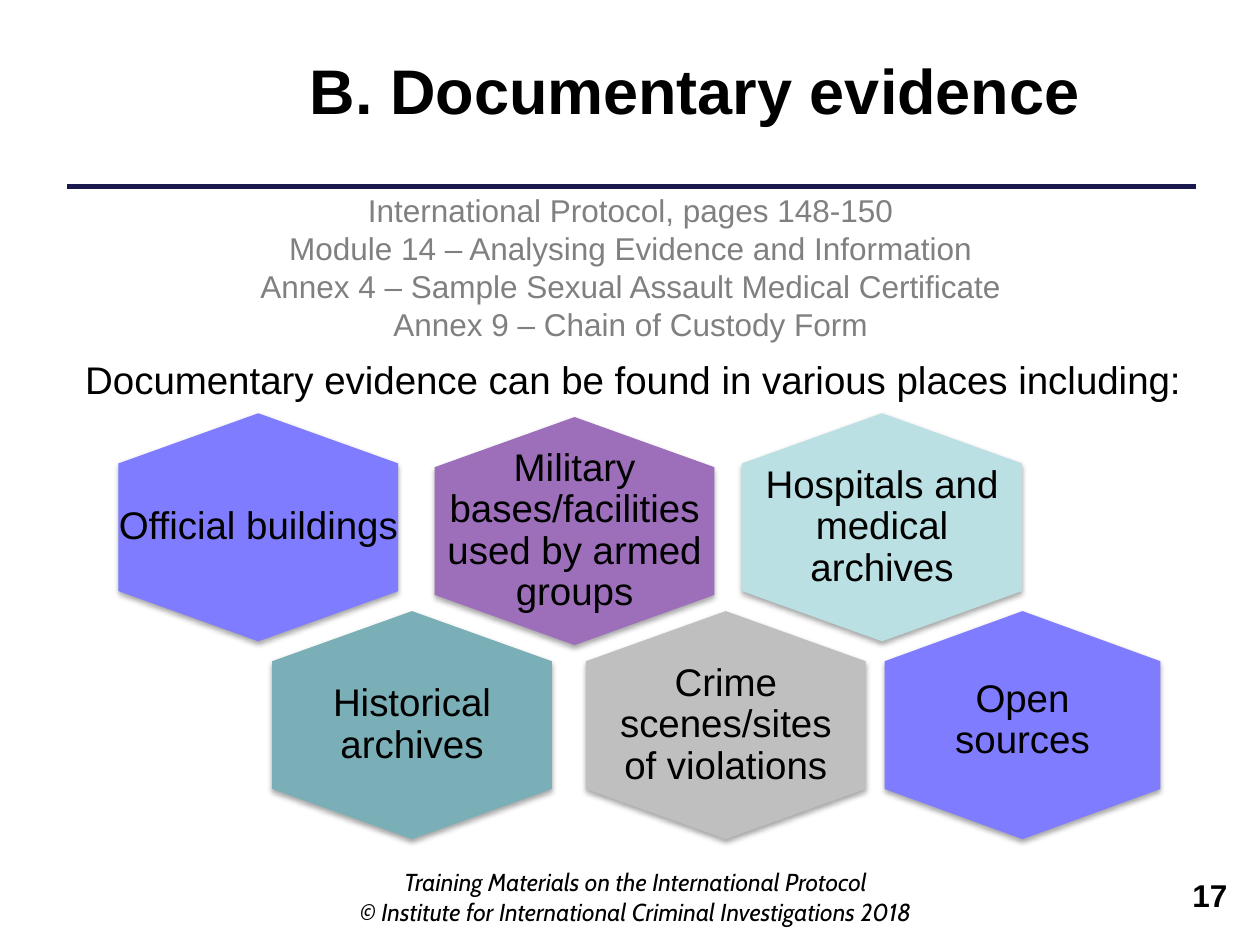
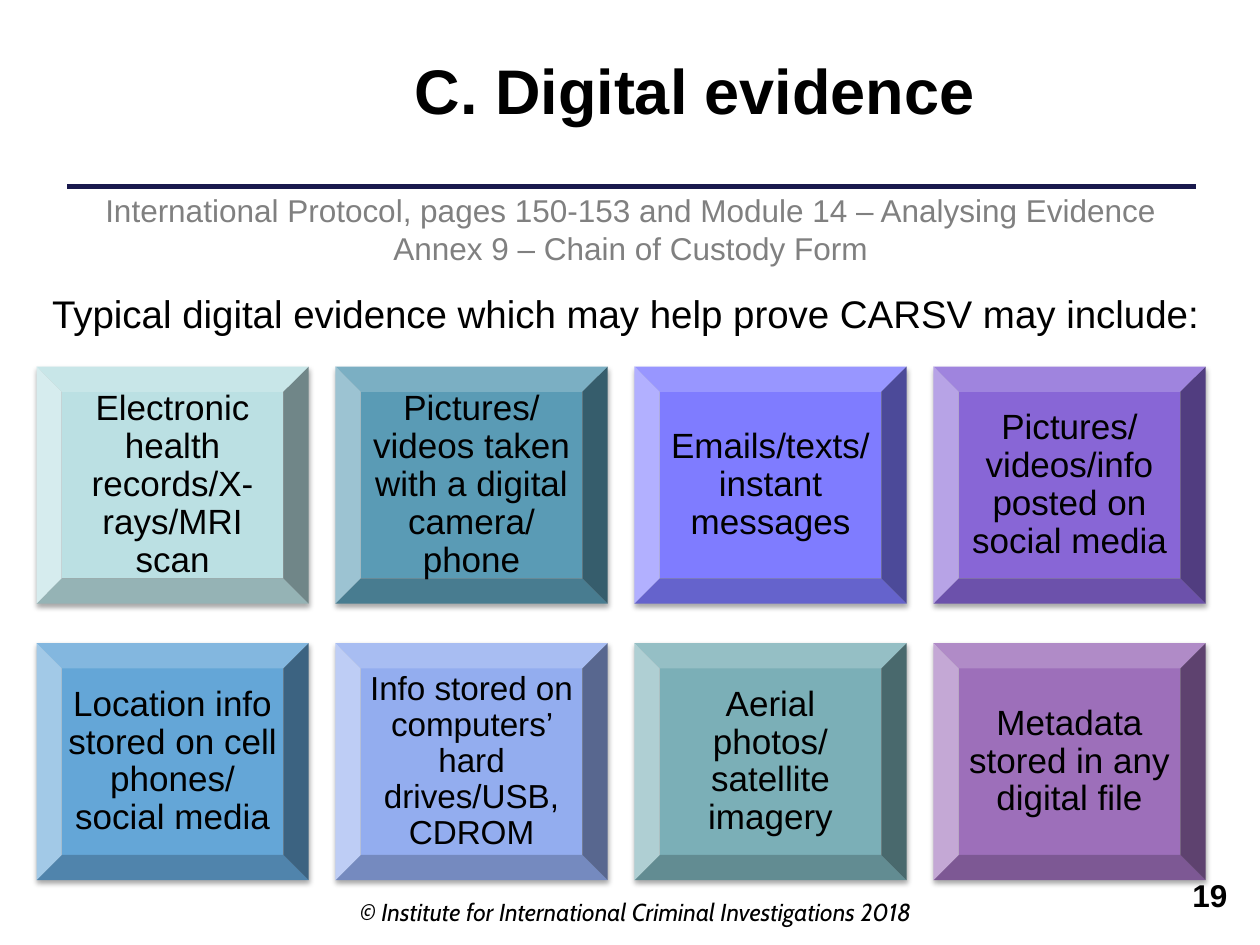
from dataclasses import dataclass
from lxml import etree
from pptx import Presentation
from pptx.dml.color import RGBColor
from pptx.enum.shapes import MSO_CONNECTOR as Link, MSO_SHAPE as Shape
from pptx.enum.text import MSO_ANCHOR as Anchor, MSO_AUTO_SIZE as Fit, PP_ALIGN as Align
from pptx.oxml.ns import qn
from pptx.util import Inches, Pt


@dataclass(frozen=True)
class Theme:
    ink: str = "000000"
    muted: str = "808080"
    rule: str = "19194D"
    blue: str = "7F7CFF"
    purple: str = "9D6FBA"
    ice: str = "BBE0E3"
    teal: str = "7BAFB7"
    grey: str = "BFBFBF"
    sea: str = "5A9BB5"
    violet: str = "8866D6"
    sky: str = "64A6D7"
    mist: str = "93ADEF"
    font: str = "Arial"
    foot: str = "Cabin"
    head: int = 36
    lead: int = 22
    tile: int = 20
    tight: int = 19
    note: int = 18
    small: int = 14


T = Theme()
COLS, ROWS = 100, 75
WIDTH, HEIGHT = Inches(10), Inches(7.5)
RIGHTS = "© Institute for International Criminal Investigations 2018"


def write(frame, text, size=T.note, color=T.ink, font=T.font, bold=False,
          italic=False, align=Align.CENTER, anchor=Anchor.TOP, gap=1.0, pad=None):
    """Fill a frame, one paragraph per line; pad is left, top, right, bottom in inches."""
    frame.word_wrap = True
    frame.auto_size = Fit.NONE
    frame.vertical_anchor = anchor
    if pad:
        (frame.margin_left, frame.margin_top,
         frame.margin_right, frame.margin_bottom) = map(Inches, pad)
    for i, line in enumerate(text.split("\n")):
        para = frame.add_paragraph() if i else frame.paragraphs[0]
        para.text = line
        para.alignment = align
        para.line_spacing = gap
        style = para.font
        style.name, style.size = font, Pt(size)
        style.bold, style.italic = bold, italic
        style.color.rgb = RGBColor.from_string(color)


class Deck:
    """Holds the presentation and current slide; lengths are grid columns and rows."""

    def __init__(self):
        self.show = Presentation()
        self.show.slide_width, self.show.slide_height = WIDTH, HEIGHT
        self.slide = None

    def scale(self, *cells):
        """Turn alternating columns and rows into lengths."""
        units = (WIDTH / COLS, HEIGHT / ROWS)
        return [round(n * units[i % 2]) for i, n in enumerate(cells)]

    def start(self, title, refs, foot, page):
        self.slide = self.show.slides.add_slide(self.show.slide_layouts[5])
        head = self.slide.shapes.title
        head.left, head.top, head.width, head.height = self.scale(13.8, 3.6, 82.7, 7.1)
        write(head.text_frame, title, size=T.head, bold=True)
        self.rule(94.9, 5.3, 14.8)
        self.text((2.8, 14.7, 94.5, 16.2), refs, color=T.muted)
        self.text((27.2, 68.3, 46.5, 5.2), foot, size=T.small, font=T.foot,
                  italic=True, anchor=Anchor.BOTTOM, pad=(0.1, 0, 0.1, 0))
        self.text((72.8, 69, 25.6, 5.2), page, bold=True, align=Align.RIGHT)

    def text(self, box, text, **fmt):
        shape = self.slide.shapes.add_textbox(*self.scale(*box))
        write(shape.text_frame, text, **fmt)

    def rule(self, left, right, y):
        line = self.slide.shapes.add_connector(
            Link.STRAIGHT, *self.scale(left, y, right, y))
        line.line.width = Pt(2.5)
        line.line.color.rgb = RGBColor.from_string(T.rule)
        etree.SubElement(line._element.spPr, qn("a:effectLst"))

    def paint(self, shape, fill):
        """Give a solid fill, no outline and a soft shadow below."""
        shape.fill.solid()
        shape.fill.fore_color.rgb = RGBColor.from_string(fill)
        shape.line.fill.background()
        shape.shadow.inherit = False
        effects = shape._element.spPr.find(qn("a:effectLst"))
        shade = etree.SubElement(effects, qn("a:outerShdw"), blurRad=str(Pt(3.1)),
                                 dist=str(Pt(1.8)), dir="5400000", rotWithShape="0")
        color = etree.SubElement(shade, qn("a:srgbClr"), val=T.ink)
        etree.SubElement(color, qn("a:alpha"), val="35000")

    def hexagon(self, x, y, text, fill, wide=22.2, tall=18.1, pad=(0, 0.26, 0, 0.26)):
        mid, low, high = x + wide / 2, y + 0.78 * tall, y + 0.22 * tall
        ends = [(x + wide, high), (x + wide, low), (mid, y + tall), (x, low), (x, high)]
        pen = self.slide.shapes.build_freeform(*self.scale(mid, y))
        pen.add_line_segments([self.scale(*end) for end in ends], close=True)
        shape = pen.convert_to_shape()
        self.paint(shape, fill)
        write(shape.text_frame, text, size=T.lead, anchor=Anchor.MIDDLE, gap=0.9, pad=pad)

    def bevel(self, x, y, text, fill, size=T.tile):
        wide, tall, edge = 21.6, 18.8, 2
        shape = self.slide.shapes.add_shape(Shape.BEVEL, *self.scale(x, y, wide, tall))
        shape.adjustments[0] = edge / tall
        self.paint(shape, fill)
        write(shape.text_frame, text, size=size, anchor=Anchor.MIDDLE, gap=0.9,
              pad=(0.04, 0, 0.04, 0))


def papers(deck):
    deck.start("B. Documentary evidence",
               "International Protocol, pages 148-150\n"
               "Module 14 – Analysing Evidence and Information\n"
               "Annex 4 – Sample Sexual Assault Medical Certificate\n"
               "Annex 9 – Chain of Custody Form",
               "Training Materials on the International Protocol\n" + RIGHTS, "17")
    deck.text((2, 27.7, 96.5, 4.7), "Documentary evidence can be found in "
              "various places including:", size=T.lead, anchor=Anchor.MIDDLE)
    top, low = 32.8, 48.5
    deck.hexagon(70.2, low, "Open sources", T.blue, wide=21.9,
                 pad=(0.23, 0.26, 0.23, 0.33))
    deck.hexagon(58.9, top, "Hospitals and medical archives", T.ice)
    deck.hexagon(34.5, top + 0.3, "Military bases/facilities used by armed groups", T.purple)
    deck.hexagon(9.4, top, "Official buildings", T.blue)
    deck.hexagon(21.6, low, "Historical archives", T.teal)
    deck.hexagon(46.5, low, "Crime scenes/sites of violations", T.grey,
                 pad=(0.23, 0.26, 0.23, 0.26))


def digital(deck):
    deck.start("C. Digital evidence",
               "International Protocol, pages 150-153 and Module 14 – Analysing Evidence\n"
               "Annex 9 – Chain of Custody Form", RIGHTS, "19")
    deck.text((2, 22.5, 95.3, 4.7), "Typical digital evidence which may help "
              "prove CARSV may include:", size=T.lead, anchor=Anchor.MIDDLE)
    tiles = [
        ("Electronic health records/X-rays/MRI scan", T.ice),
        ("Pictures/ videos taken with a digital camera/ phone", T.sea),
        ("Emails/texts/ instant messages", T.blue),
        ("Pictures/ videos/info posted on social media", T.violet),
        ("Location info stored on cell phones/ social media", T.sky),
        ("Info stored on computers’ hard drives/USB, CDROM", T.mist, T.tight),
        ("Aerial photos/ satellite imagery", T.teal),
        ("Metadata stored in any digital file", T.purple),
    ]
    for i, tile in enumerate(tiles):
        row, col = divmod(i, 4)
        deck.bevel(2.9 + 23.73 * col, 29.1 + 21.95 * row, *tile)


def main():
    deck = Deck()
    papers(deck)
    digital(deck)
    deck.show.save("out.pptx")


if __name__ == "__main__":
    main()
